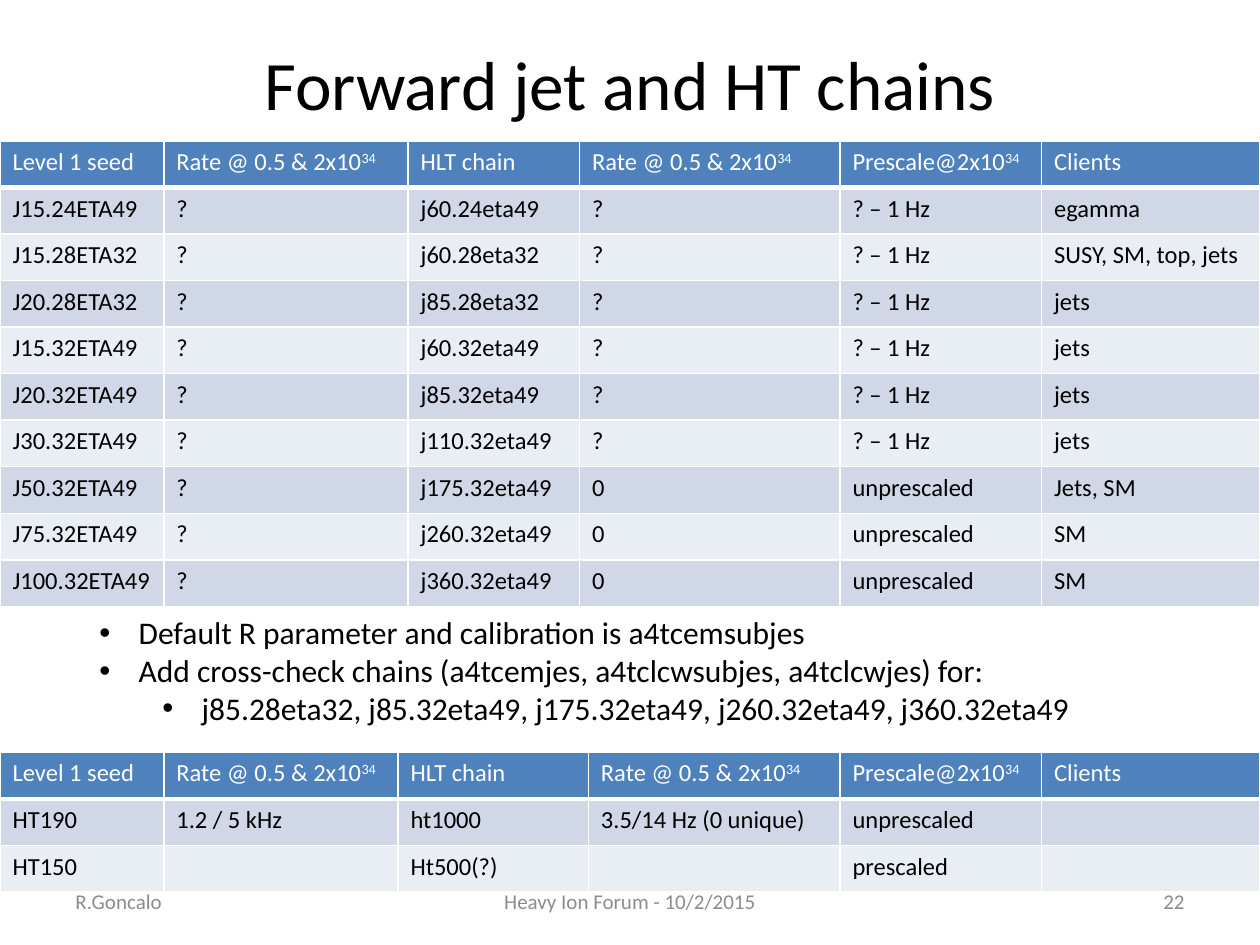
"""Build the slide on forward jet and HT trigger chains."""
import lxml.etree
import pptx
import pptx.dml.color
import pptx.enum.text
import pptx.oxml.ns
import pptx.util

Pt = pptx.util.Pt
RGB = pptx.dml.color.RGBColor.from_string
qn = pptx.oxml.ns.qn
ALIGN = pptx.enum.text.PP_ALIGN
ANCHOR = pptx.enum.text.MSO_ANCHOR

THEME = {
    "font": "Calibri", "text": "000000", "footer": "8C8C8C", "white": "FFFFFF",
    "header": "4F81BD", "bands": ("D0D8E8", "E9EDF4"),
    "title_size": 39.6, "list_size": 18, "table_size": 14, "footer_size": 12,
}
SLIDE = (720, 540)
ROW_HEIGHT = 26.6

TITLE = "Forward jet and HT chains"
HEADER = ("Level 1 seed", "Rate @ 0.5 & 2x10^34", "HLT chain",
          "Rate @ 0.5 & 2x10^34", "Prescale@2x10^34", "Clients")
JET_ROWS = [
    ("J15.24ETA49", "?", "j60.24eta49", "?", "? – 1 Hz", "egamma"),
    ("J15.28ETA32", "?", "j60.28eta32", "?", "? – 1 Hz", "SUSY, SM, top, jets"),
    ("J20.28ETA32", "?", "j85.28eta32", "?", "? – 1 Hz", "jets"),
    ("J15.32ETA49", "?", "j60.32eta49", "?", "? – 1 Hz", "jets"),
    ("J20.32ETA49", "?", "j85.32eta49", "?", "? – 1 Hz", "jets"),
    ("J30.32ETA49", "?", "j110.32eta49", "?", "? – 1 Hz", "jets"),
    ("J50.32ETA49", "?", "j175.32eta49", "0", "unprescaled", "Jets, SM"),
    ("J75.32ETA49", "?", "j260.32eta49", "0", "unprescaled", "SM"),
    ("J100.32ETA49", "?", "j360.32eta49", "0", "unprescaled", "SM"),
]
HT_ROWS = [
    ("HT190", "1.2 / 5 kHz", "ht1000", "3.5/14 Hz (0 unique)", "unprescaled", ""),
    ("HT150", "", "Ht500(?)", "", "prescaled", ""),
]
TABLES = [
    (80.6, (93.6, 139.6, 98, 148.8, 115.2, 124.8), JET_ROWS),
    (429.9, (93.6, 133.8, 108.8, 143.8, 115.2, 124.8), HT_ROWS),
]
BULLETS = [
    (0, "Default R parameter and calibration is a4tcemsubjes"),
    (0, "Add cross-check chains (a4tcemjes, a4tclcwsubjes, a4tclcwjes) for:"),
    (1, "j85.28eta32, j85.32eta49, j175.32eta49, j260.32eta49, j360.32eta49"),
]
BULLET_INDENT, LEVEL_INDENT = 22.5, 36
FOOTERS = [
    (36, 168, ALIGN.LEFT, "R.Goncalo"),
    (246, 228, ALIGN.CENTER, "Heavy Ion Forum - 10/2/2015"),
    (516, 168, ALIGN.RIGHT, "22"),
]


def add_run(p, text, size, color):
    r = p.add_run()
    r.text = text
    r.font.name, r.font.size, r.font.bold = THEME["font"], Pt(size), False
    r.font.color.rgb = RGB(color)
    return r


def add_box(s, left, top, width, height, anchor=ANCHOR.MIDDLE):
    tf = s.shapes.add_textbox(*map(Pt, (left, top, width, height))).text_frame
    tf.word_wrap = True
    tf.vertical_anchor = anchor
    return tf


def add_line(s, box, text, size, color, align):
    p = add_box(s, *box).paragraphs[0]
    p.alignment = align
    add_run(p, text, size, color)


def add_bullets(s):
    tf = add_box(s, 49.7, 347, 609.8, 72.7, ANCHOR.TOP)
    for i, (level, text) in enumerate(BULLETS):
        p = tf.add_paragraph() if i else tf.paragraphs[0]
        p.level = level
        add_run(p, text, THEME["list_size"], THEME["text"])
        pPr = p._p.get_or_add_pPr()
        pPr.set("marL", str(Pt(BULLET_INDENT + LEVEL_INDENT * level)))
        pPr.set("indent", str(-Pt(BULLET_INDENT)))
        lxml.etree.SubElement(pPr, qn("a:buFont")).set("typeface", "Arial")
        lxml.etree.SubElement(pPr, qn("a:buChar")).set("char", "•")


def style_cell(cell, fill, bottom):
    tcPr = cell._tc.get_or_add_tcPr()
    for side, width in (("L", 1), ("R", 1), ("T", 1), ("B", bottom)):
        ln = lxml.etree.SubElement(tcPr, qn("a:ln" + side), w=str(Pt(width)))
        solid = lxml.etree.SubElement(ln, qn("a:solidFill"))
        lxml.etree.SubElement(solid, qn("a:srgbClr")).set("val", THEME["white"])
    cell.fill.solid()
    cell.fill.fore_color.rgb = RGB(fill)


def fill_cell(cell, text, color):
    p, size = cell.text_frame.paragraphs[0], THEME["table_size"]
    base, _, power = text.partition("^")
    if base:
        add_run(p, base, size, color)
    else:
        lxml.etree.SubElement(p._p, qn("a:endParaRPr")).set("sz", str(size * 100))
    if power:
        r = add_run(p, power, size, color)
        r._r.get_or_add_rPr().set("baseline", "30000")


def add_chain_table(s, top, widths, body):
    rows = [HEADER] + body
    frame = s.shapes.add_table(len(rows), len(widths), 0, Pt(top),
                               Pt(sum(widths)), Pt(ROW_HEIGHT * len(rows)))
    table = frame.table
    for column, width in zip(table.columns, widths):
        column.width = Pt(width)
    for i, values in enumerate(rows):
        table.rows[i].height = Pt(ROW_HEIGHT)
        fill = THEME["bands"][(i - 1) % 2] if i else THEME["header"]
        color = THEME["text"] if i else THEME["white"]
        for j, text in enumerate(values):
            style_cell(table.cell(i, j), fill, 1 if i else 3)
            fill_cell(table.cell(i, j), text, color)


def main():
    prs = pptx.Presentation()
    prs.slide_width, prs.slide_height = map(Pt, SLIDE)
    s = prs.slides.add_slide(prs.slide_layouts[6])
    add_line(s, (36, 21.6, 648, 51.1), TITLE, THEME["title_size"],
             THEME["text"], ALIGN.CENTER)
    add_bullets(s)
    for table in TABLES:
        add_chain_table(s, *table)
    for left, width, align, text in FOOTERS:
        add_line(s, (left, 500.5, width, 28.75), text, THEME["footer_size"],
                 THEME["footer"], align)
    prs.save("out.pptx")


if __name__ == "__main__":
    main()
